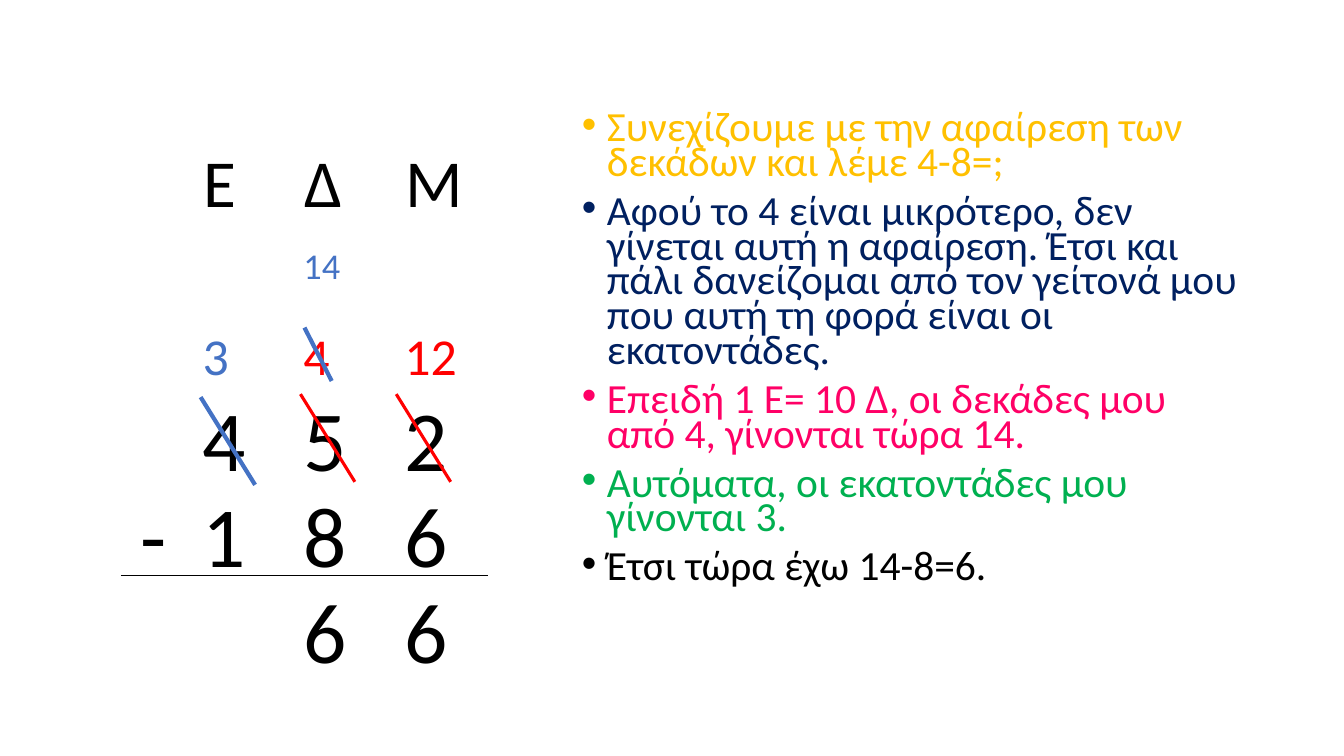
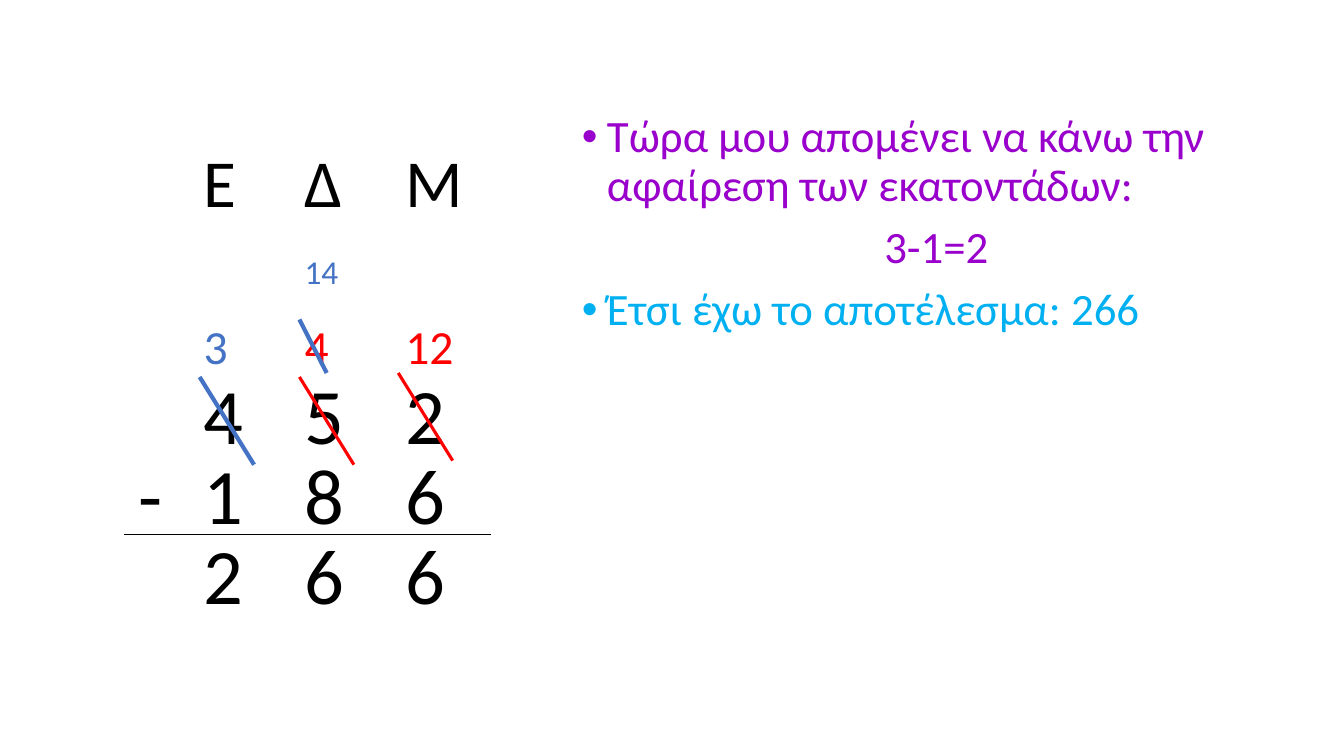
from lxml import etree
from pptx import Presentation
from pptx.dml.color import RGBColor
from pptx.enum import shapes, text
from pptx.oxml.ns import qn
from pptx.util import Pt

PX = 9144
FONT = "Calibri"
BLACK = RGBColor(0x00, 0x00, 0x00)
RED = RGBColor(0xFF, 0x00, 0x00)
BLUE = RGBColor(0x44, 0x72, 0xC4)
GOLD = RGBColor(0xFF, 0xC0, 0x00)
NAVY = RGBColor(0x00, 0x20, 0x60)
PINK = RGBColor(0xFF, 0x00, 0x66)
GREEN = RGBColor(0x00, 0xB0, 0x50)
PURPLE = RGBColor(0x99, 0x00, 0xCC)
SKY = RGBColor(0x00, 0xB0, 0xF0)

TITLE_BOX = (92, 50, 430, 175)
STEPS_BOX = (567, 108, 675, 533)
COLUMN = 100
BIG_STRIKE = (54, 87)
SMALL_STRIKE = (27, 53)


def place(sp, box):
    """Move a placeholder to a box and return its text frame."""
    sp.left, sp.top, sp.width, sp.height = (n * PX for n in box)
    tf = sp.text_frame
    tf.word_wrap = True
    tf.auto_size = text.MSO_AUTO_SIZE.NONE
    return tf


def add_paragraph(tf, index, runs, spacing, before=10, indent=(0, 0)):
    """Write runs of (text, size, colour) as one paragraph."""
    p = tf.paragraphs[0] if index == 0 else tf.add_paragraph()
    p.line_spacing = spacing
    p.space_before = Pt(before)
    pPr = p._p.get_or_add_pPr()
    for name, value in zip(("marL", "indent", "defTabSz"), (*indent, COLUMN)):
        pPr.set(name, str(value * PX))
    if indent[1] >= 0:
        etree.SubElement(pPr, qn("a:buNone"))
    for words, size, color in runs:
        r = p.add_run()
        r.text = words
        r.font.name = FONT
        r.font.size = Pt(size)
        r.font.bold = False
        r.font.color.rgb = color


def add_line(slide, box, offset, size, color, width):
    """Draw a line from an offset inside a box."""
    x, y = box[0] + offset[0], box[1] + offset[1]
    line = slide.shapes.add_connector(
        shapes.MSO_CONNECTOR.STRAIGHT,
        x * PX, y * PX, (x + size[0]) * PX, (y + size[1]) * PX)
    line.line.color.rgb = color
    line.line.width = Pt(width)
    etree.SubElement(line._element.spPr, qn("a:effectLst"))


def add_heading(slide, box):
    """Write the place-value letters above the sum."""
    tf = place(slide.shapes.title, box)
    tf.vertical_anchor = text.MSO_ANCHOR.BOTTOM
    add_paragraph(tf, 0, [("\tΕ\tΔ\tΜ", 48, BLACK)], 0.9, 0)


def add_steps(slide, box, steps, size, spacing):
    """List the steps, given as (text, colour, bulleted)."""
    tf = place(slide.placeholders[1], box)
    for i, (words, color, bulleted) in enumerate(steps):
        indent = (25, -25) if bulleted else (300, 0)
        add_paragraph(tf, i, [(words, size, color)], spacing, indent=indent)


def add_sum(slide, box, result, sizes, spacing, minus, rule, strikes):
    """Set out the subtraction with its carries, strikes and rule."""
    big, middle, small = sizes
    rows = [
        (0, [("\t", big, BLACK), ("\t14", small, BLUE)]),
        (0, [("\t3", middle, BLUE), ("\t", big, BLACK), ("4\t12", middle, RED)]),
        (0, [("\t4\t5\t2", big, BLACK)]),
        (minus, [("-\t1\t8\t6", big, BLACK)]),
        (0, [(result, big, BLACK)]),
    ]
    tf = place(slide.placeholders[2], box)
    for i, (first, runs) in enumerate(rows):
        add_paragraph(tf, i, runs, spacing, indent=(0, first))
    add_line(slide, box, rule, (364, 0), BLACK, 0.5)
    for offset, size, color in strikes:
        add_line(slide, box, offset, size, color, 3 if color == BLUE else 2.25)


def add_slide(prs, steps, column_sum):
    """Add one slide with heading, sum and steps."""
    slide = prs.slides.add_slide(prs.slide_layouts[7])
    add_heading(slide, TITLE_BOX)
    add_steps(slide, STEPS_BOX, **steps)
    add_sum(slide, **column_sum)


def main():
    """Build and save the presentation."""
    prs = Presentation()
    prs.slide_width, prs.slide_height = 1333 * PX, 750 * PX
    add_slide(
        prs,
        dict(size=29.6, spacing=0.7, steps=[
            ("Συνεχίζουμε με την αφαίρεση των δεκάδων και λέμε 4-8=;", GOLD, True),
            ("Αφού το 4 είναι μικρότερο, δεν γίνεται αυτή η αφαίρεση. Έτσι και "
             "πάλι δανείζομαι από τον γείτονά μου που αυτή τη φορά είναι οι "
             "εκατοντάδες.", NAVY, True),
            ("Επειδή 1 Ε= 10 Δ, οι δεκάδες μου από 4, γίνονται τώρα 14.", PINK, True),
            ("Αυτόματα, οι εκατοντάδες μου γίνονται 3.", GREEN, True),
            ("Έτσι τώρα έχω 14-8=6.", BLACK, True),
        ]),
        dict(box=(91, 207, 430, 489), result="\t\t6\t6", sizes=(61, 37, 25.9),
             spacing=0.8, minus=38, rule=(29, 364), strikes=[
                 ((207, 184), BIG_STRIKE, RED),
                 ((302, 184), BIG_STRIKE, RED),
                 ((108, 187), BIG_STRIKE, BLUE),
                 ((211, 118), SMALL_STRIKE, BLUE),
             ]))
    add_slide(
        prs,
        dict(size=32, spacing=0.9, steps=[
            ("Τώρα μου απομένει να κάνω την αφαίρεση των εκατοντάδων:", PURPLE, True),
            ("3-1=2", PURPLE, False),
            ("Έτσι έχω το αποτέλεσμα: 266", SKY, True),
        ]),
        dict(box=(92, 225, 430, 417), result="\t2\t6\t6", sizes=(56.1, 34, 23.8),
             spacing=0.7, minus=35, rule=(31, 305), strikes=[
                 ((106, 149), BIG_STRIKE, BLUE),
                 ((205, 149), BIG_STRIKE, RED),
                 ((303, 145), BIG_STRIKE, RED),
                 ((205, 92), SMALL_STRIKE, BLUE),
             ]))
    prs.save("out.pptx")


if __name__ == "__main__":
    main()
